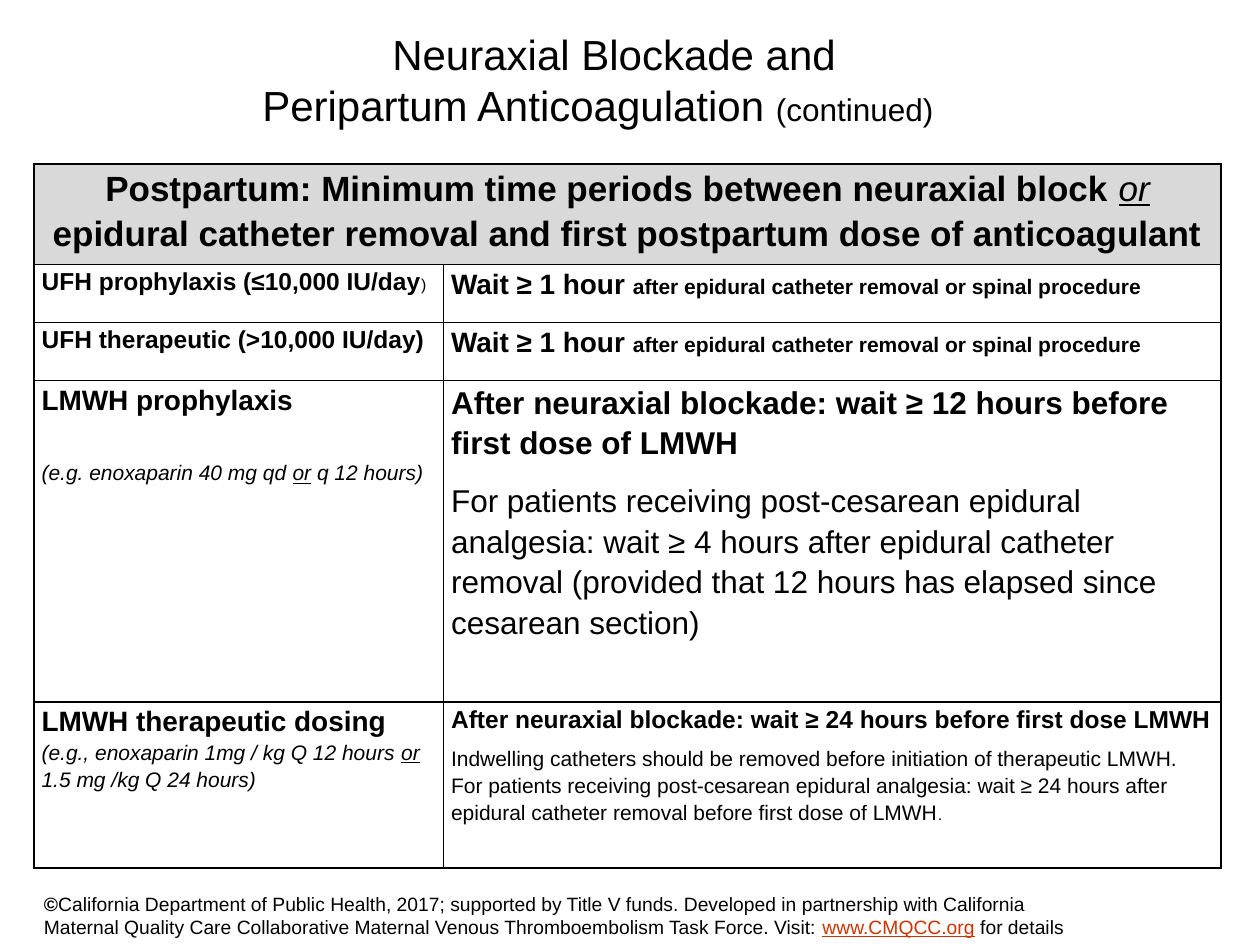
"""Build a slide on neuraxial blockade and peripartum anticoagulation."""
import pptx
import pptx.dml.color
import pptx.enum.text
import pptx.oxml.ns
import pptx.util
from lxml import etree

BLACK = pptx.dml.color.RGBColor(0, 0, 0)
GREY = pptx.dml.color.RGBColor(0xD9, 0xD9, 0xD9)
WHITE = pptx.dml.color.RGBColor(255, 255, 255)
RUST = pptx.dml.color.RGBColor(0xCC, 0x33, 0x00)
CENTER = pptx.enum.text.PP_ALIGN.CENTER
LEFT = pptx.enum.text.PP_ALIGN.LEFT
TOP = pptx.enum.text.MSO_ANCHOR.TOP
MIDDLE = pptx.enum.text.MSO_ANCHOR.MIDDLE


def add_text(p, text, size=12, bold=False, italic=False, underline=False, color=BLACK):
    """Append one formatted run to a paragraph."""
    r = p.add_run()
    r.text = text
    r.font.name = "Arial"
    r.font.size = pptx.util.Pt(size)
    r.font.bold = bold
    r.font.italic = italic
    r.font.underline = underline
    r.font.color.rgb = color


def run(text, size=12, **fmt):
    """Describe a run as its text and format."""
    return text, dict(fmt, size=size)


def para(*runs, after=10):
    """Describe a paragraph as its runs and the space after it."""
    return runs, after


class Deck:
    """Holds the grid, the style and the current slide."""

    COLS, ROWS = 100, 75

    def __init__(self):
        self.prs = pptx.Presentation()
        self.prs.slide_width = pptx.util.Inches(10)
        self.prs.slide_height = pptx.util.Inches(7.5)
        self.s = self.prs.slides.add_slide(self.prs.slide_layouts[5])

    def x(self, cols):
        return int(self.prs.slide_width * cols / self.COLS)

    def y(self, rows):
        return int(self.prs.slide_height * rows / self.ROWS)

    def box(self, left, top, width, height):
        return self.x(left), self.y(top), self.x(width), self.y(height)

    def fill_text(self, tf, paras, align=LEFT, spacing=1.0):
        for i, (runs, after) in enumerate(paras):
            p = tf.add_paragraph() if i else tf.paragraphs[0]
            p.alignment = align
            p.line_spacing = spacing
            p.space_before = pptx.util.Pt(0)
            p.space_after = pptx.util.Pt(after)
            for text, fmt in runs:
                add_text(p, text, **fmt)

    def title(self, place, paras, last_indent):
        sp = self.s.shapes.title
        sp.left, sp.top, sp.width, sp.height = self.box(*place)
        tf = sp.text_frame
        tf.auto_size = pptx.enum.text.MSO_AUTO_SIZE.NONE
        tf.vertical_anchor = MIDDLE
        self.fill_text(tf, paras, CENTER)
        pPr = tf.paragraphs[-1]._p.get_or_add_pPr()
        pPr.set("marR", str(self.x(last_indent)))

    def note(self, place, paras):
        tf = self.s.shapes.add_textbox(*self.box(*place)).text_frame
        tf.word_wrap = True
        self.fill_text(tf, paras)

    def borders(self, cell):
        tcPr = cell._tc.get_or_add_tcPr()
        for i, side in enumerate(("lnL", "lnR", "lnT", "lnB")):
            ln = etree.Element(pptx.oxml.ns.qn(f"a:{side}"), w=str(pptx.util.Pt(1)))
            fill = etree.SubElement(ln, pptx.oxml.ns.qn("a:solidFill"))
            etree.SubElement(fill, pptx.oxml.ns.qn("a:srgbClr"), val=str(BLACK))
            tcPr.insert(i, ln)

    def table(self, left, top, widths, heights, header, body):
        place = self.box(left, top, sum(widths), sum(heights))
        table = self.s.shapes.add_table(len(heights), len(widths), *place).table
        table.first_row = table.horz_banding = False
        for col, width in zip(table.columns, widths):
            col.width = self.x(width)
        for row, height in zip(table.rows, heights):
            row.height = self.y(height)
        table.cell(0, 0).merge(table.cell(0, len(widths) - 1))
        for i, row in enumerate([[header]] + body):
            for j, paras in enumerate(row):
                align = LEFT if i else CENTER
                self.fill_text(table.cell(i, j).text_frame, paras, align, 1.15)
        for i in range(len(heights)):
            for cell in table.rows[i].cells:
                cell.margin_left = cell.margin_right = self.x(0.6)
                cell.margin_top = cell.margin_bottom = 0
                cell.vertical_anchor = TOP
                cell.fill.solid()
                cell.fill.fore_color.rgb = WHITE if i else GREY
                self.borders(cell)


def main():
    """Lay out the title, the table and the credit."""
    deck = Deck()
    deck.title((14.2, 1.7, 70, 9.2), [
        para(run("Neuraxial Blockade and ", 24), after=0),
        para(run("Peripartum Anticoagulation ", 24), run("(continued)", 18), after=0),
    ], last_indent=3.5)

    header = [para(
        run("Postpartum: Minimum time periods between neuraxial block ", 20, bold=True),
        run("or ", 20, italic=True, underline=True),
        run("epidural catheter removal and first postpartum dose of anticoagulant", 20, bold=True))]
    wait_hour = [para(
        run("Wait ≥ 1 hour ", 16, bold=True),
        run("after epidural catheter removal or spinal procedure", bold=True))]
    body = [
        [[para(run("UFH prophylaxis (≤10,000 IU/day", 14, bold=True), run(")", 9))], wait_hour],
        [[para(run("UFH therapeutic (>10,000 IU/day)", 14, bold=True))], wait_hour],
        [[para(run("LMWH prophylaxis", 16, bold=True), after=24),
          para(run("(e.g. enoxaparin 40 mg qd ", italic=True),
               run("or", italic=True, underline=True),
               run(" q 12 hours)", italic=True))],
         [para(run("After neuraxial blockade: wait ≥ 12 hours before first dose of LMWH",
                   18, bold=True)),
          para(run("For patients receiving post-cesarean epidural analgesia: wait ≥ 4 hours "
                   "after epidural catheter removal (provided that 12 hours has elapsed "
                   "since cesarean section)", 18))]],
        [[para(run("LMWH therapeutic dosing", 16, bold=True), after=0),
          para(run("(e.g., enoxaparin 1mg / kg Q 12 hours ", italic=True),
               run("or", italic=True, underline=True),
               run(" 1.5 mg /kg Q 24 hours)", italic=True))],
         [para(run("After neuraxial blockade: wait ≥ 24 hours before first dose LMWH",
                   14, bold=True), after=6),
          para(run("Indwelling catheters should be removed before initiation of therapeutic "
                   "LMWH. For patients receiving post-cesarean epidural analgesia: wait ≥ 24 "
                   "hours after epidural catheter removal before first dose of LMWH"),
               run(".", 9))]],
    ]
    deck.table(2.7, 13, [32.5, 61.7], [8, 4.6, 4.6, 25.5, 13.2], header, body)

    deck.note((2.5, 70.3, 84.2, 4.7), [para(
        run("©", 11, bold=True),
        run("California Department of Public Health, 2017; supported by Title V funds. "
            "Developed in partnership with California Maternal Quality Care Collaborative "
            "Maternal Venous Thromboembolism Task Force. Visit: ", 11),
        run("www.CMQCC.org", 11, underline=True, color=RUST),
        run(" for details", 11), after=0)])
    deck.prs.save("out.pptx")


if __name__ == "__main__":
    main()
